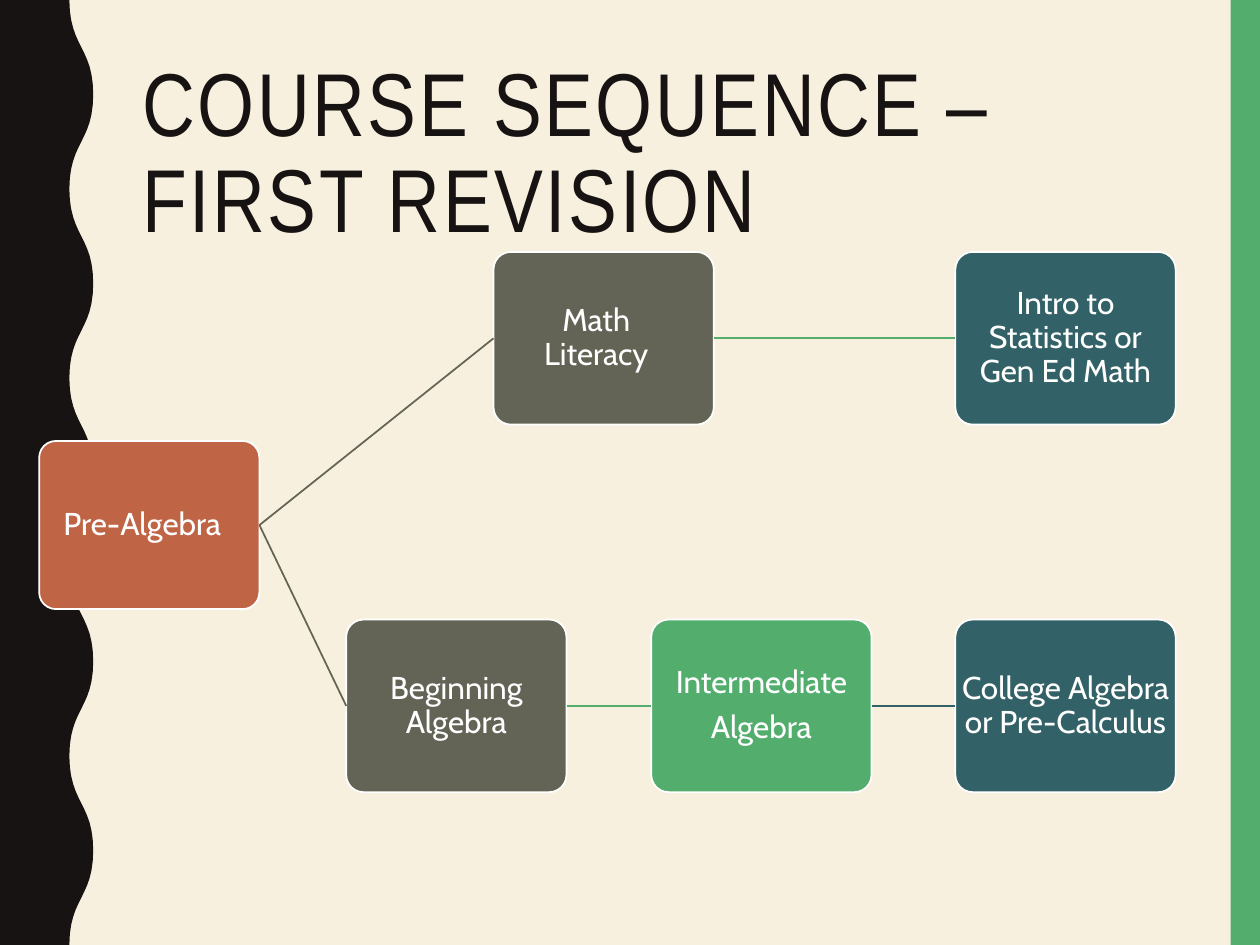
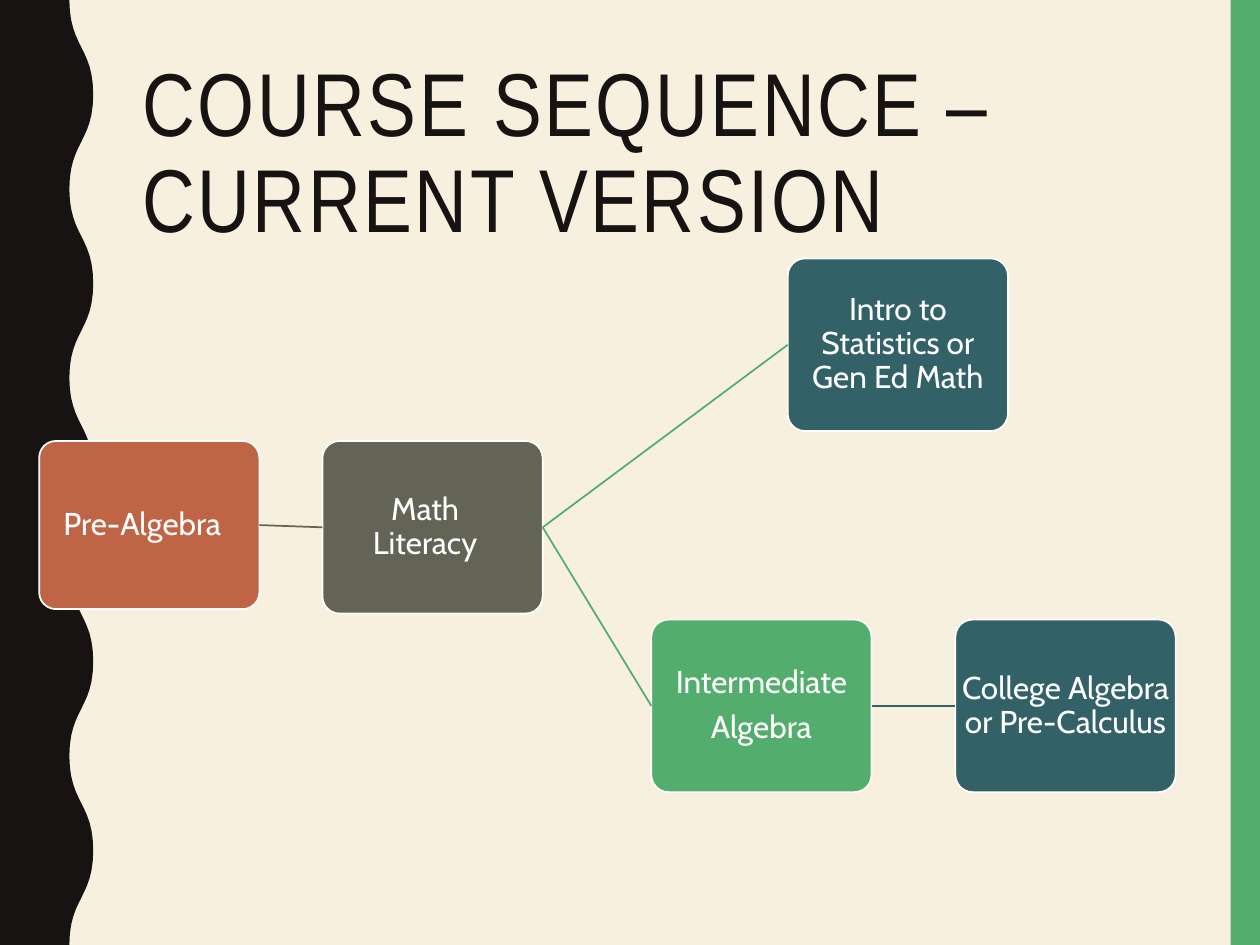
from pptx import Presentation
from pptx.dml.color import RGBColor
from pptx.enum.shapes import MSO_CONNECTOR as CONN, MSO_SHAPE as SHAPE
from pptx.enum.text import MSO_ANCHOR as ANCHOR, PP_ALIGN as ALIGN
from pptx.oxml.ns import qn
from pptx.util import Cm, Pt
from lxml import etree

COLORS = {"cream": "F7F0DF", "ink": "171312", "green": "53AE6E", "rust": "BF6546",
          "olive": "636455", "teal": "326267", "white": "FFFFFF"}
TITLE_FONT, BODY_FONT = "Arial Narrow", "Cabin"
WIDTH, HEIGHT = 25.4, 19.05
BOX_W, BOX_H, START_H = 4.44, 3.48, 3.39
MIDDLE, BOTTOM = 8.89, 12.49
TEXT_INSET = 0.03

# course: (lines, fill, height, extra inset on the right)
COURSES = {
    "pre": (["Pre-Algebra"], "rust", START_H, 0.28),
    "literacy": (["Math\vLiteracy"], "olive", BOX_H, 0.3),
    "stats": (["Intro to Statistics or Gen Ed Math"], "teal", BOX_H, 0),
    "beginning": (["Beginning Algebra"], "olive", BOX_H, 0),
    "intermediate": (["Intermediate", "Algebra"], "green", BOX_H, 0),
    "college": (["College Algebra or Pre-Calculus"], "teal", BOX_H, 0),
}
# A link takes the colour of the level that follows its first course
LINK_COLORS = {"rust": "olive", "olive": "green", "green": "teal"}

SLIDES = [
    {"title": "COURSE SEQUENCE – FIRST REVISION",
     "places": {"pre": (0.79, MIDDLE), "literacy": (9.95, 5.08), "stats": (19.26, 5.08),
                "beginning": (6.98, BOTTOM), "intermediate": (13.13, BOTTOM),
                "college": (19.26, BOTTOM)},
     "links": [("pre", "literacy"), ("literacy", "stats"), ("pre", "beginning"),
               ("beginning", "intermediate"), ("intermediate", "college")]},
    {"title": "COURSE SEQUENCE – CURRENT VERSION",
     "places": {"pre": (0.79, MIDDLE), "literacy": (6.5, MIDDLE), "stats": (15.88, 5.21),
                "intermediate": (13.13, BOTTOM), "college": (19.26, BOTTOM)},
     "links": [("pre", "literacy"), ("literacy", "stats"), ("literacy", "intermediate"),
               ("intermediate", "college")]},
]


def rgb(name):
    return RGBColor.from_string(COLORS[name])


def paint(sp, fill, line=None):
    sp.shadow.inherit = False
    sp.fill.solid()
    sp.fill.fore_color.rgb = rgb(fill)
    if line:
        sp.line.color.rgb = rgb(line)
        sp.line.width = Pt(1)
    else:
        sp.line.fill.background()


def write(tf, lines, *, font, size, color, align=ALIGN.LEFT, anchor=ANCHOR.MIDDLE,
          after=0, spacing=None):
    tf.word_wrap = True
    tf.vertical_anchor = anchor
    tf.text = "\n".join(lines)
    for p in tf.paragraphs:
        p.alignment = align
        p.line_spacing = 0.9
        p.space_after = Pt(after)
        for r in p.runs:
            r.font.name = font
            r.font.size = Pt(size)
            r.font.color.rgb = rgb(color)
            if spacing:
                r._r.get_or_add_rPr().set("spc", str(int(spacing * 100)))


def wave_points(near=1.4, far=1.88, halves=10, steps=12):
    """Points down the wavy edge, each half wave an S-shaped Bezier curve."""
    half_h = HEIGHT / halves
    points = [(near, 0)]
    for i in range(halves):
        start, end = (near, far) if i % 2 == 0 else (far, near)
        for k in range(1, steps + 1):
            t = k / steps
            x = start + (end - start) * (3 * t**2 - 2 * t**3)
            y = half_h * (i + 1.5 * t * (1 - t) + t**3)
            points.append((x, y))
    return points


def add_frame(s, title):
    s.background.fill.solid()
    s.background.fill.fore_color.rgb = rgb("cream")
    band_w = 0.59
    band = s.shapes.add_shape(SHAPE.RECTANGLE, Cm(WIDTH - band_w), 0, Cm(band_w), Cm(HEIGHT))
    paint(band, "green")
    builder = s.shapes.build_freeform(0, 0)
    edge = [(Cm(x), Cm(y)) for x, y in wave_points()]
    builder.add_line_segments(edge + [(0, Cm(HEIGHT))], close=True)
    paint(builder.convert_to_shape(), "ink")
    box = s.shapes.add_textbox(Cm(2.62), Cm(1.07), Cm(21.2), Cm(4.14))
    write(box.text_frame, [title], font=TITLE_FONT, size=51, color="ink",
          anchor=ANCHOR.BOTTOM, spacing=1.5)


def add_course(s, key, left, top):
    lines, fill, height, extra = COURSES[key]
    sp = s.shapes.add_shape(SHAPE.ROUNDED_RECTANGLE, Cm(left), Cm(top), Cm(BOX_W), Cm(height))
    sp.adjustments[0] = 0.1
    paint(sp, fill, "white")
    tf = sp.text_frame
    tf.margin_left = tf.margin_top = tf.margin_bottom = Cm(TEXT_INSET)
    tf.margin_right = Cm(TEXT_INSET + extra)
    write(tf, lines, font=BODY_FONT, size=18, color="white", align=ALIGN.CENTER, after=6.3)
    return sp


def add_link(s, start, end, color):
    """Join the right side of one box to the left side of another."""
    line = s.shapes.add_connector(CONN.STRAIGHT, 0, 0, 0, 0)
    line.begin_connect(start, 3)
    line.end_connect(end, 1)
    line.line.color.rgb = rgb(color)
    line.line.width = Pt(1)
    etree.SubElement(line._element.spPr, qn("a:effectLst"))


def main():
    prs = Presentation()
    prs.slide_width, prs.slide_height = Cm(WIDTH), Cm(HEIGHT)
    for content in SLIDES:
        s = prs.slides.add_slide(prs.slide_layouts[6])
        add_frame(s, content["title"])
        boxes = {key: add_course(s, key, *place) for key, place in content["places"].items()}
        for start, end in content["links"]:
            add_link(s, boxes[start], boxes[end], LINK_COLORS[COURSES[start][1]])
    prs.save("out.pptx")


if __name__ == "__main__":
    main()
